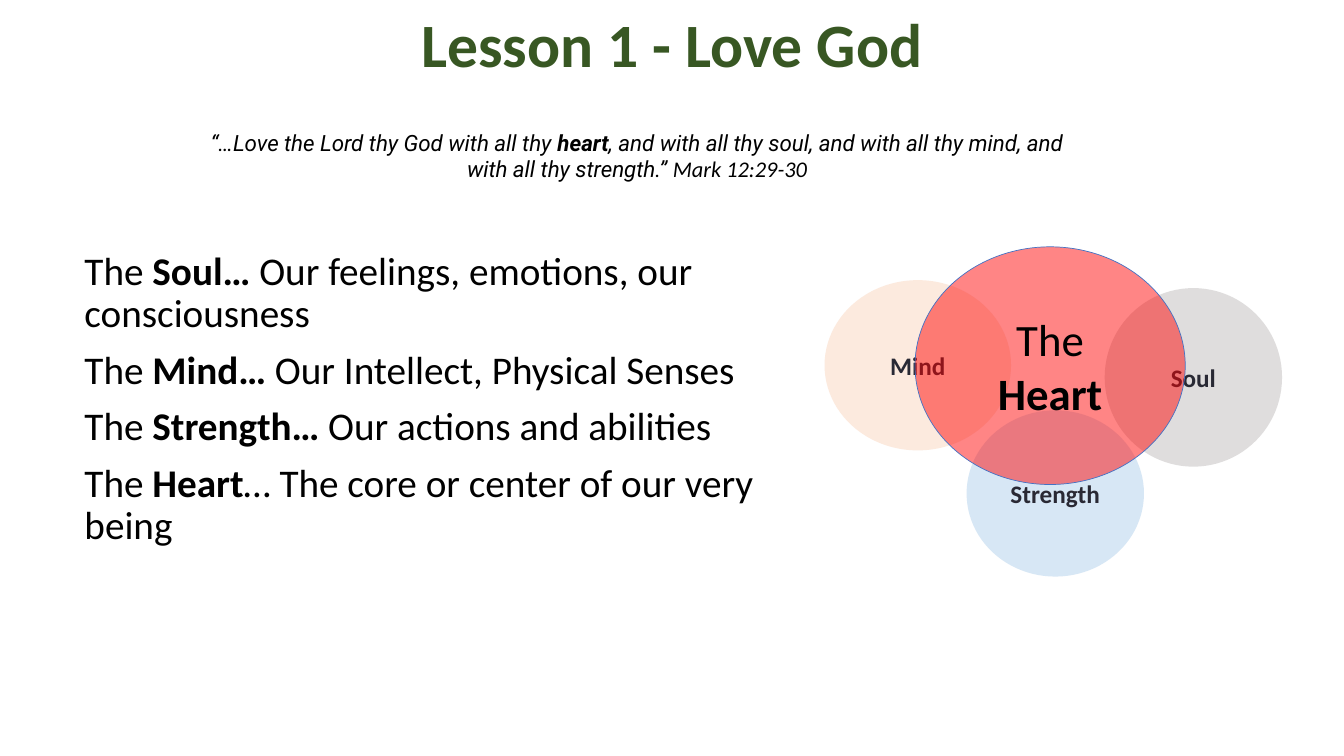
from pptx import Presentation
from pptx.dml.color import RGBColor
from pptx.enum.shapes import MSO_SHAPE
from pptx.enum.text import MSO_ANCHOR as Anchor, PP_ALIGN as Align
from pptx.oxml.ns import qn
from pptx.util import Cm, Pt
from lxml.etree import SubElement

BLACK = RGBColor(0x00, 0x00, 0x00)
GREEN = RGBColor(0x38, 0x57, 0x23)
INK = RGBColor(0x29, 0x29, 0x34)
GREY = RGBColor(0xAF, 0xAB, 0xAB)
PEACH = RGBColor(0xF8, 0xCB, 0xAD)
SKY = RGBColor(0x9D, 0xC3, 0xE6)
RED = RGBColor(0xFF, 0x00, 0x00)
BLUE = RGBColor(0x44, 0x72, 0xC4)

MEANINGS = [
    ("The ", "Soul… ", "Our feelings, emotions, our consciousness"),
    ("The ", "Mind…", " Our Intellect, Physical Senses"),
    ("The ", "Strength… ", "Our actions and abilities"),
    ("The ", "Heart", "… The core or center of our very being"),
]
VERSE = (
    "“…Love the Lord thy God with all thy ",
    "heart",
    ", and with all thy soul, and with all thy mind, and with all thy strength.” ",
)
PARTS = [
    ("Soul", GREY, 27.84, 7.26, 4.47, 4.5),
    ("Mind", PEACH, 20.78, 7.06, 4.7, 4.29),
    ("Strength", SKY, 24.36, 10.34, 4.47, 4.19),
]


def add_run(p, text, size, color=BLACK, bold=False, italic=False, font="Calibri"):
    """Append a formatted run to a paragraph."""
    r = p.add_run()
    r.text = text
    r.font.name, r.font.size = font, Pt(size)
    r.font.bold, r.font.italic = bold, italic
    r.font.color.rgb = color


def add_emphasis(p, texts, size, **style):
    """Append runs in which every second one is bold."""
    for i, text in enumerate(texts):
        add_run(p, text, size, bold=i % 2 == 1, **style)


def add_box(s, left, top, width, height):
    """Add a wrapping text box and return its text frame."""
    sp = s.shapes.add_textbox(Cm(left), Cm(top), Cm(width), Cm(height))
    sp.text_frame.word_wrap = True
    return sp.text_frame


def add_circle(group, color, opacity, left, top, width, height):
    """Add a translucent ellipse and return it."""
    sp = group.shapes.add_shape(
        MSO_SHAPE.OVAL, Cm(left), Cm(top), Cm(width), Cm(height))
    sp.shadow.inherit = False
    sp.fill.solid()
    sp.fill.fore_color.rgb = color
    fill_color = sp._element.spPr.find(qn("a:solidFill")).find(qn("a:srgbClr"))
    SubElement(fill_color, qn("a:alpha"), val=str(opacity * 1000))
    sp.line.fill.background()
    tf = sp.text_frame
    tf.word_wrap = True
    tf.vertical_anchor = Anchor.MIDDLE
    tf.paragraphs[0].alignment = Align.CENTER
    return sp


def add_title(s):
    """Add the lesson title."""
    p = add_box(s, 5.51, 0.23, 22.86, 2.74).paragraphs[0]
    p.alignment, p.line_spacing = Align.CENTER, 0.9
    add_run(p, "Lesson 1 - Love God", 44, GREEN, bold=True)


def add_meanings(s):
    """Add the list that explains each part."""
    tf = add_box(s, 1.88, 6.22, 18.49, 10.44)
    for i, texts in enumerate(MEANINGS):
        p = tf.add_paragraph() if i else tf.paragraphs[0]
        p.line_spacing = 0.9
        p.space_before = Pt(10 if i else 0)
        add_emphasis(p, texts, 28)


def add_diagram(s):
    """Add the overlapping circles around the heart."""
    group = s.shapes.add_group_shape()
    for name, color, *place in PARTS:
        sp = add_circle(group, color, 40, *place)
        add_run(sp.text_frame.paragraphs[0], name, 18, INK, bold=True)
    heart = add_circle(group, RED, 48, 23.06, 6.22, 6.81, 5.99)
    heart.line.color.rgb = BLUE
    heart.line.width = Pt(0.5)
    add_emphasis(heart.text_frame.paragraphs[0], ("The ", "Heart"), 32)


def add_verse(s):
    """Add the quoted verse and its reference."""
    p = add_box(s, 4.65, 3.12, 22.81, 1.63).paragraphs[0]
    p.alignment = Align.CENTER
    add_emphasis(p, VERSE, 16, italic=True, font="Roboto")
    add_run(p, "Mark 12:29-30", 16, italic=True)


def main():
    """Build and save the slide."""
    prs = Presentation()
    prs.slide_width, prs.slide_height = Cm(33.87), Cm(19.05)
    s = prs.slides.add_slide(prs.slide_layouts[6])
    add_title(s)
    add_meanings(s)
    add_diagram(s)
    add_verse(s)
    prs.save("out.pptx")


if __name__ == "__main__":
    main()
